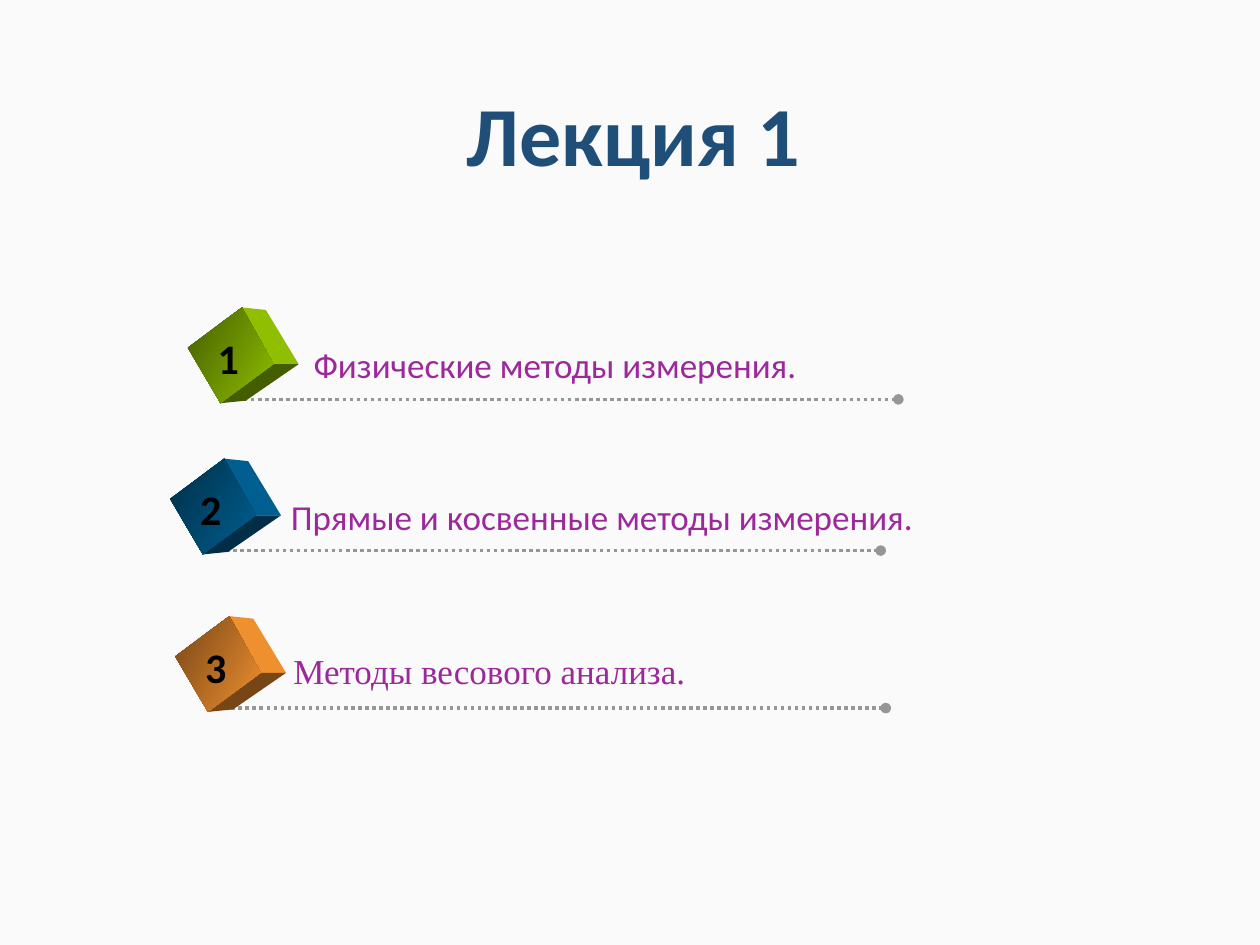
from dataclasses import dataclass

from lxml import etree
from pptx import Presentation
from pptx.dml.color import RGBColor
from pptx.enum.dml import MSO_LINE
from pptx.enum.shapes import MSO_CONNECTOR
from pptx.enum.text import MSO_ANCHOR, MSO_AUTO_SIZE, PP_ALIGN
from pptx.oxml.ns import qn
from pptx.util import Inches, Pt

DOTTED = MSO_LINE.ROUND_DOT
STRAIGHT = MSO_CONNECTOR.STRAIGHT
MIDDLE = MSO_ANCHOR.MIDDLE
GROW = MSO_AUTO_SIZE.SHAPE_TO_FIT_TEXT
LEFT, CENTER, JUSTIFY = PP_ALIGN.LEFT, PP_ALIGN.CENTER, PP_ALIGN.JUSTIFY

FRONT_FACE = [(-0.39, -0.41), (0.04, -0.73), (0.29, -0.28), (-0.13, 0.03)]
SIDE_FACE = [(0.04, -0.73), (0.23, -0.71), (0.49, -0.28), (0.29, -0.28)]
BOTTOM_FACE = [(-0.13, 0.03), (0.29, -0.28), (0.49, -0.28), (0.07, 0.01)]
RULE_LENGTH = 5.25


@dataclass(frozen=True)
class Theme:
    background: str = "FAFAFA"
    title: str = "1F4E79"
    outline: str = "FFFFFF"
    body: str = "9D289B"
    number: str = "000000"
    rule: str = "969696"
    green: tuple = ("445D00", "8FBF00")
    blue: tuple = ("002E47", "005F90")
    orange: tuple = ("774617", "EF902F")
    font: str = "Calibri"
    serif: str = "Times New Roman"
    title_size: int = 48
    number_size: int = 24
    body_size: int = 20


def write_text(frame, text, *, font, size, color, bold=False, align=LEFT,
               spacing=1.0, indent=0):
    paragraph = frame.paragraphs[0]
    paragraph.alignment = align
    paragraph.line_spacing = spacing
    if indent:
        properties = paragraph._p.get_or_add_pPr()
        properties.set("marL", "0")
        properties.set("indent", str(Inches(indent)))
    run = paragraph.add_run()
    run.text = text
    run.font.name = font
    run.font.size = Pt(size)
    run.font.bold = bold
    run.font.color.rgb = RGBColor.from_string(color)
    return run


class LectureSlide:
    def __init__(self, presentation, theme):
        self.theme = theme
        self.slide = presentation.slides.add_slide(presentation.slide_layouts[5])
        fill = self.slide.background.fill
        fill.solid()
        fill.fore_color.rgb = RGBColor.from_string(theme.background)

    def add_title(self, text):
        title = self.slide.shapes.title
        title.left, title.top = Inches(0.72), Inches(0.67)
        title.width, title.height = Inches(8.62), Inches(0.87)
        title.text_frame.vertical_anchor = MIDDLE
        run = write_text(title.text_frame, text, font=self.theme.font,
                         size=self.theme.title_size, color=self.theme.title,
                         bold=True, align=CENTER, spacing=0.9)
        outline = etree.Element(qn("a:ln"), w=str(Pt(0.75)))
        fill = etree.SubElement(outline, qn("a:solidFill"))
        etree.SubElement(fill, qn("a:srgbClr"), val=self.theme.outline)
        run.font._element.insert(0, outline)

    def add_rule(self, shapes, x, y):
        rule = shapes.add_connector(STRAIGHT, Inches(x), Inches(y),
                                    Inches(x + RULE_LENGTH), Inches(y))
        rule.line.color.rgb = RGBColor.from_string(self.theme.rule)
        rule.line.width = Pt(2)
        rule.line.dash_style = DOTTED
        etree.SubElement(rule.line._get_or_add_ln(), qn("a:tailEnd"), type="oval")
        etree.SubElement(rule._element.spPr, qn("a:effectLst"))

    def add_face(self, shapes, x, y, corners, colors):
        points = [(Inches(x + dx), Inches(y + dy)) for dx, dy in corners]
        builder = shapes.build_freeform(*points[0])
        builder.add_line_segments(points[1:], close=True)
        face = builder.convert_to_shape()
        face.shadow.inherit = False
        face.line.fill.background()
        if len(colors) == 1:
            face.fill.solid()
            face.fill.fore_color.rgb = RGBColor.from_string(colors[0])
        else:
            face.fill.gradient()
            face.fill.gradient_angle = 330
            for stop, color in zip(face.fill.gradient_stops, colors):
                stop.color.rgb = RGBColor.from_string(color)

    def add_text(self, shapes, text, box, wrap=True, **style):
        shape = shapes.add_textbox(*(Inches(value) for value in box))
        shape.text_frame.word_wrap = wrap
        shape.text_frame.auto_size = GROW
        write_text(shape.text_frame, text, **style)

    def add_marker(self, number, x, y, colors):
        shapes = self.slide.shapes.add_group_shape().shapes
        dark, bright = colors
        self.add_rule(shapes, x, y)
        self.add_face(shapes, x, y, SIDE_FACE, [bright])
        self.add_face(shapes, x, y, BOTTOM_FACE, [dark])
        self.add_face(shapes, x, y, FRONT_FACE, colors)
        self.add_text(shapes, str(number), (x - 0.25, y - 0.58, 0.37, 0.51),
                      wrap=False, font=self.theme.font, bold=True,
                      size=self.theme.number_size, color=self.theme.number)

    def add_topic(self, text, box, **style):
        self.add_text(self.slide.shapes, text, box, size=self.theme.body_size,
                      color=self.theme.body, spacing=1.5, **style)


def main():
    presentation = Presentation()
    presentation.slide_width = Inches(10)
    presentation.slide_height = Inches(7.5)
    theme = Theme()
    lecture = LectureSlide(presentation, theme)
    lecture.add_title("Лекция 1")

    indented = {"align": JUSTIFY, "indent": 0.49}
    topics = [
        ("Физические методы измерения.", (1.88, 3.17), theme.green,
         (2.39, 2.51, 4.45, 0.61), {"font": theme.font}),
        ("Прямые и косвенные методы измерения.", (1.74, 4.37), theme.blue,
         (1.72, 3.72, 5.93, 0.61), {"font": theme.font, **indented}),
        ("Методы весового анализа.", (1.78, 5.62), theme.orange,
         (1.74, 4.94, 4.93, 0.61), {"font": theme.serif, **indented}),
    ]
    for number, (text, start, colors, box, style) in enumerate(topics, 1):
        lecture.add_marker(number, *start, colors)
        lecture.add_topic(text, box, **style)

    presentation.save("out.pptx")


if __name__ == "__main__":
    main()
